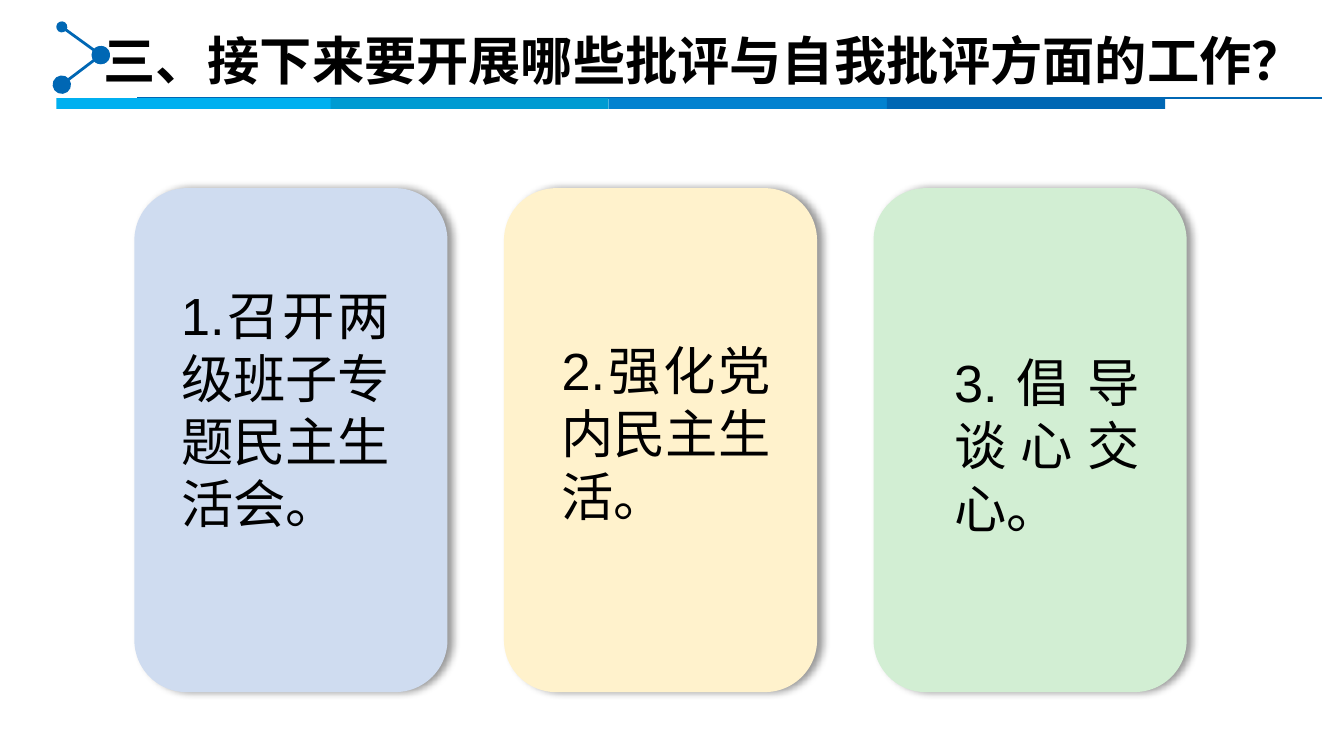
from lxml.etree import SubElement
from pptx import Presentation
from pptx.dml.color import RGBColor
from pptx.enum.shapes import MSO_CONNECTOR as Connector, MSO_SHAPE as Shape
from pptx.enum.text import MSO_AUTO_SIZE as AutoSize, PP_ALIGN as Align
from pptx.oxml.ns import qn
from pptx.util import Inches, Pt

TITLE = "三、接下来要开展哪些批评与自我批评方面的工作？"
TITLE_FONT = "Noto Sans CJK SC"
BLUE = "0067B4"
CARDS = [
    ("CFDCF0", "1.召开两级班子专题民主生活会。", (1.25, 2.06, 1.75, 2.46)),
    ("FFF2CC", "2.强化党内民主生活。", (4.08, 2.47, 1.75, 1.51)),
    ("D2EED3", "3.倡导谈心交心。", (7, 2.56, 1.58, 1.51)),
]
CARD_LEFT, CARD_TOP, CARD_WIDTH, CARD_HEIGHT, CARD_STEP = 1, 1.4, 2.33, 3.75, 2.75
BARS = [(0.42, "00B0F0"), (2.46, "009BD2"), (4.53, "0282D0"), (6.6, BLUE)]
RULE_TOP, BAR_WIDTH, BAR_HEIGHT = 0.73, 2.07, 0.08
LINKS = [
    ((0.46, 0.2), (0.75, 0.41), "med"),
    ((0.75, 0.41), (0.46, 0.63), "lg"),
]


def color(value):
    return RGBColor.from_string(value)


def add_block(page, kind, place, fill):
    block = page.shapes.add_shape(kind, *map(Inches, place))
    block.shadow.inherit = False
    block.fill.solid()
    block.fill.fore_color.rgb = color(fill)
    block.line.fill.background()
    return block


def add_shadow(block):
    effects = block._element.spPr.find(qn("a:effectLst"))
    shadow = SubElement(effects, qn("a:outerShdw"), blurRad=str(Pt(4)),
                        dist=str(Pt(3)), dir="0", algn="l", rotWithShape="0")
    tint = SubElement(shadow, qn("a:srgbClr"), val="000000")
    SubElement(tint, qn("a:alpha"), val="40000")


def add_line(page, start, end, width):
    line = page.shapes.add_connector(Connector.STRAIGHT, *map(Inches, start + end))
    line.line.color.rgb = color(BLUE)
    line.line.width = Pt(width)
    SubElement(line._element.spPr, qn("a:effectLst"))
    return line


def add_dots(line, head_size, tail_size):
    outline = line._element.spPr.find(qn("a:ln"))
    for end, size in (("headEnd", head_size), ("tailEnd", tail_size)):
        SubElement(outline, qn(f"a:{end}"), type="oval", w=size, len=size)


def add_text(page, text, place, font, align, wrap=True, bold=False):
    box = page.shapes.add_textbox(*map(Inches, place))
    frame = box.text_frame
    frame.word_wrap = wrap
    frame.auto_size = AutoSize.SHAPE_TO_FIT_TEXT
    para = frame.paragraphs[0]
    para.text = text
    para.alignment = align
    para.font.name = font
    para.font.size = Pt(28)
    para.font.bold = bold
    para.font.color.rgb = color("000000")
    return para


deck = Presentation()
deck.slide_width = Inches(10)
deck.slide_height = deck.slide_width * 9 // 16
page = deck.slides.add_slide(deck.slide_layouts[6])

title = add_text(page, TITLE, (0.62, 0.16, 9.23, 0.57), TITLE_FONT,
                 Align.CENTER, wrap=False, bold=True)
SubElement(title._p.pPr.find(qn("a:defRPr")), qn("a:ea"), typeface=TITLE_FONT)

for start, end, head_size in LINKS:
    add_dots(add_line(page, start, end, 1.5), head_size, "lg")
add_line(page, (1.02, RULE_TOP), (9.84, RULE_TOP), 1)
for left, fill in BARS:
    add_block(page, Shape.RECTANGLE, (left, RULE_TOP, BAR_WIDTH, BAR_HEIGHT), fill)

for index, (fill, text, place) in enumerate(CARDS):
    left = CARD_LEFT + index * CARD_STEP
    card = add_block(page, Shape.ROUNDED_RECTANGLE,
                     (left, CARD_TOP, CARD_WIDTH, CARD_HEIGHT), fill)
    add_shadow(card)
    add_text(page, text, place, "Arial", Align.JUSTIFY)

deck.save("out.pptx")
